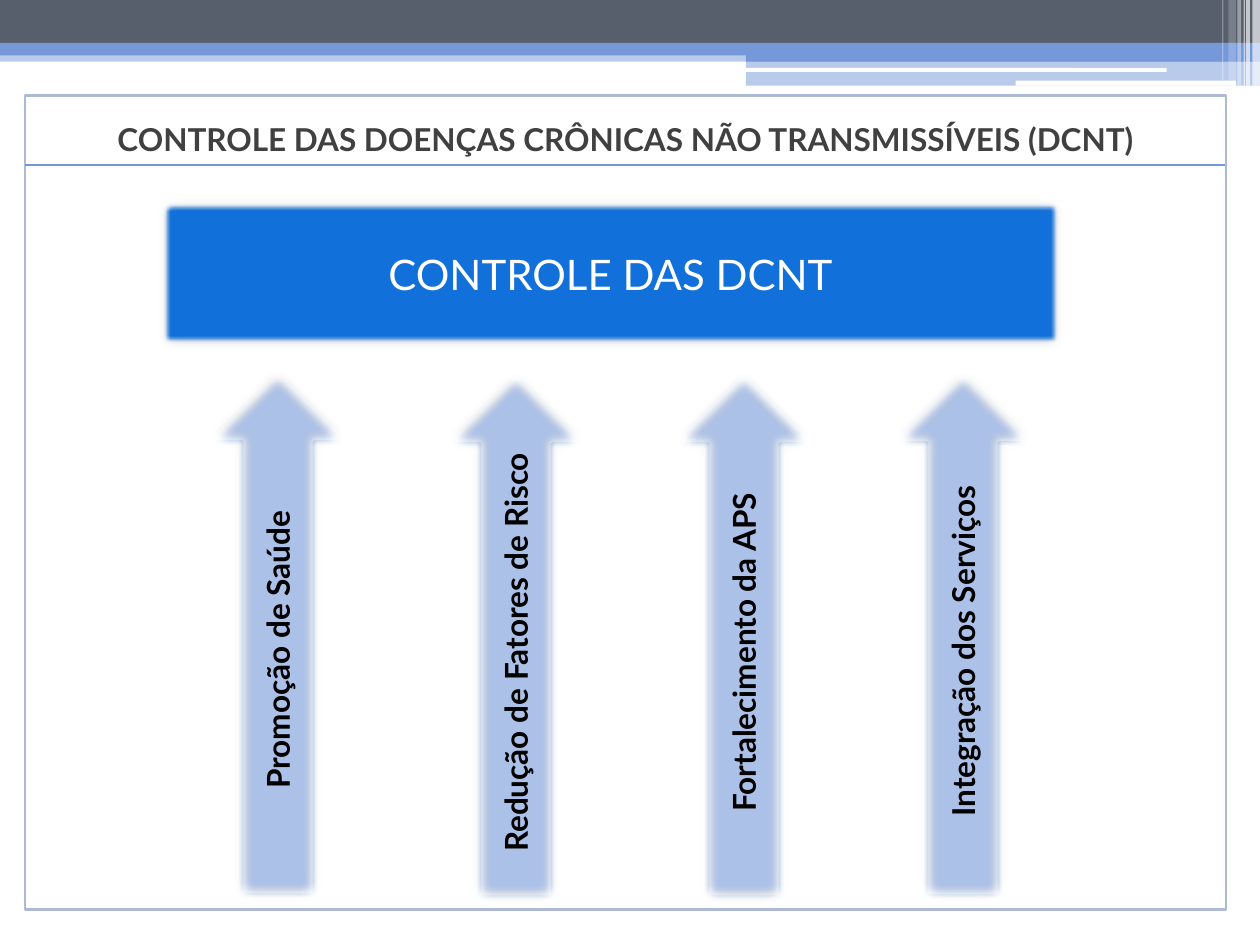
from lxml.etree import SubElement
from pptx import Presentation
from pptx.dml.color import RGBColor
from pptx.enum.shapes import MSO_CONNECTOR, MSO_SHAPE
from pptx.enum.text import MSO_ANCHOR, PP_ALIGN
from pptx.oxml.ns import qn
from pptx.util import Inches, Pt

WHITE = RGBColor(0xFF, 0xFF, 0xFF)
BLACK = RGBColor(0, 0, 0)
SLATE = RGBColor(0x57, 0x5F, 0x6D)
BLUE = RGBColor(0x75, 0x98, 0xD9)
DEEP = RGBColor(0x11, 0x70, 0xD9)
PALE = RGBColor(0xAC, 0xC1, 0xE8)
EDGE = RGBColor(0xAE, 0xBA, 0xD5)
GRAY = RGBColor(0x40, 0x40, 0x40)
RECT, ROUND, ARROW = MSO_SHAPE.RECTANGLE, MSO_SHAPE.ROUNDED_RECTANGLE, MSO_SHAPE.UP_ARROW

deck = Presentation()
deck.slide_width, deck.slide_height = Inches(10), Inches(7.5)
COL, ROW = deck.slide_width / 100, deck.slide_height / 75
slide = deck.slides.add_slide(deck.slide_layouts[6])


def draw(kind, left, top, wide, high, fill, alpha=100, line=None, width=1.5):
    item = slide.shapes.add_shape(
        kind, int(left * COL), int(top * ROW), int(wide * COL), int(high * ROW))
    item.shadow.inherit = False
    item.fill.solid()
    item.fill.fore_color.rgb = fill
    if alpha < 100:
        tint = item._element.spPr.find(qn("a:solidFill"))[0]
        SubElement(tint, qn("a:alpha"), val=str(alpha * 1000))
    if line is None:
        item.line.fill.background()
    else:
        item.line.color.rgb = line
        item.line.width = Pt(width)
    return item


def label(item, text, form, soft=None, angle=0):
    frame = item.text_frame
    frame.word_wrap = True
    frame.vertical_anchor = MSO_ANCHOR.MIDDLE
    part = frame.paragraphs[0]
    part.alignment = PP_ALIGN.CENTER
    run = part.add_run()
    run.text = text
    run.font.color.rgb = form["color"]
    for name, value in form["font"].items():
        setattr(run.font, name, value)
    if soft:
        group = item._element.spPr.find(qn("a:effectLst"))
        shade = SubElement(group, qn("a:outerShdw"), blurRad=str(Pt(6)), dist="0",
                           dir=str(angle * 60000), rotWithShape="0")
        tint = SubElement(shade, qn("a:srgbClr"), val=str(BLACK))
        SubElement(tint, qn("a:alpha"), val="20000")
        SubElement(group, qn("a:softEdge"), rad=str(Pt(soft)))


bands = [
    (RECT, 0, 4, 100, 0.9, BLUE, 50),
    (RECT, 0, 0, 100, 3.4, SLATE, 100),
    (RECT, 0, 3.4, 100, 1, BLUE, 100),
    (RECT, 59.2, 3.9, 40.8, 1, BLUE, 100),
    (RECT, 59.2, 4.8, 40.8, 2, BLUE, 50),
    (ROUND, 59.1, 5.4, 33.5, 0.3, WHITE, 100),
    (ROUND, 80.6, 6.4, 17.5, 0.4, WHITE, 100),
]
for band in bands:
    draw(*band)

stripes = [(99.4, 0.6, 6.8, 65), (98.9, 0.3, 6.8, 65), (98.7, 0.1, 6.8, 60),
           (98.2, 0.3, 6.8, 40), (97.5, 0.6, 6.4, 20), (97, 0.1, 6.4, 30)]
for left, wide, high, alpha in stripes:
    draw(RECT, left, 0, wide, high, WHITE, alpha)

bold = {"name": "Lato", "size": Pt(18), "bold": True}
forms = {
    "title": {"color": GRAY, "font": bold},
    "main": {"color": WHITE, "font": {"name": "Lato", "size": Pt(24), "bold": False}},
    "arrow": {"color": BLACK, "font": bold},
}

panel = draw(RECT, 2, 7.6, 95.3, 64.6, WHITE, line=EDGE)
label(panel, "CONTROLE DAS DOENÇAS CRÔNICAS NÃO TRANSMISSÍVEIS (DCNT)", forms["title"])
panel.text_frame.vertical_anchor = MSO_ANCHOR.TOP
panel.text_frame.margin_top = int(1.9 * ROW)

goal = draw(RECT, 13, 16.2, 70.9, 11, DEEP, line=DEEP)
label(goal, "CONTROLE DAS DCNT", forms["main"], 2.5, 225)

arrows = [(16.1, 29.2, "Promoção de Saúde"), (53.1, 29.4, "Fortalecimento da APS"),
          (35, 29.4, "Redução de Fatores de Risco"), (70.5, 29.3, "Integração dos Serviços")]
for left, top, text in arrows:
    arrow = draw(ARROW, left, top, 11.8, 41.8, PALE, line=DEEP, width=3)
    label(arrow, text, forms["arrow"], 5, 315)
    arrow.text_frame._txBody.bodyPr.set("vert", "vert270")

rule = slide.shapes.add_connector(
    MSO_CONNECTOR.STRAIGHT, int(2 * COL), int(13.1 * ROW), int(97.2 * COL), int(13.1 * ROW))
rule.line.color.rgb = BLUE
rule.line.width = Pt(1.5)
SubElement(rule._element.spPr, qn("a:effectLst"))

deck.save("out.pptx")
